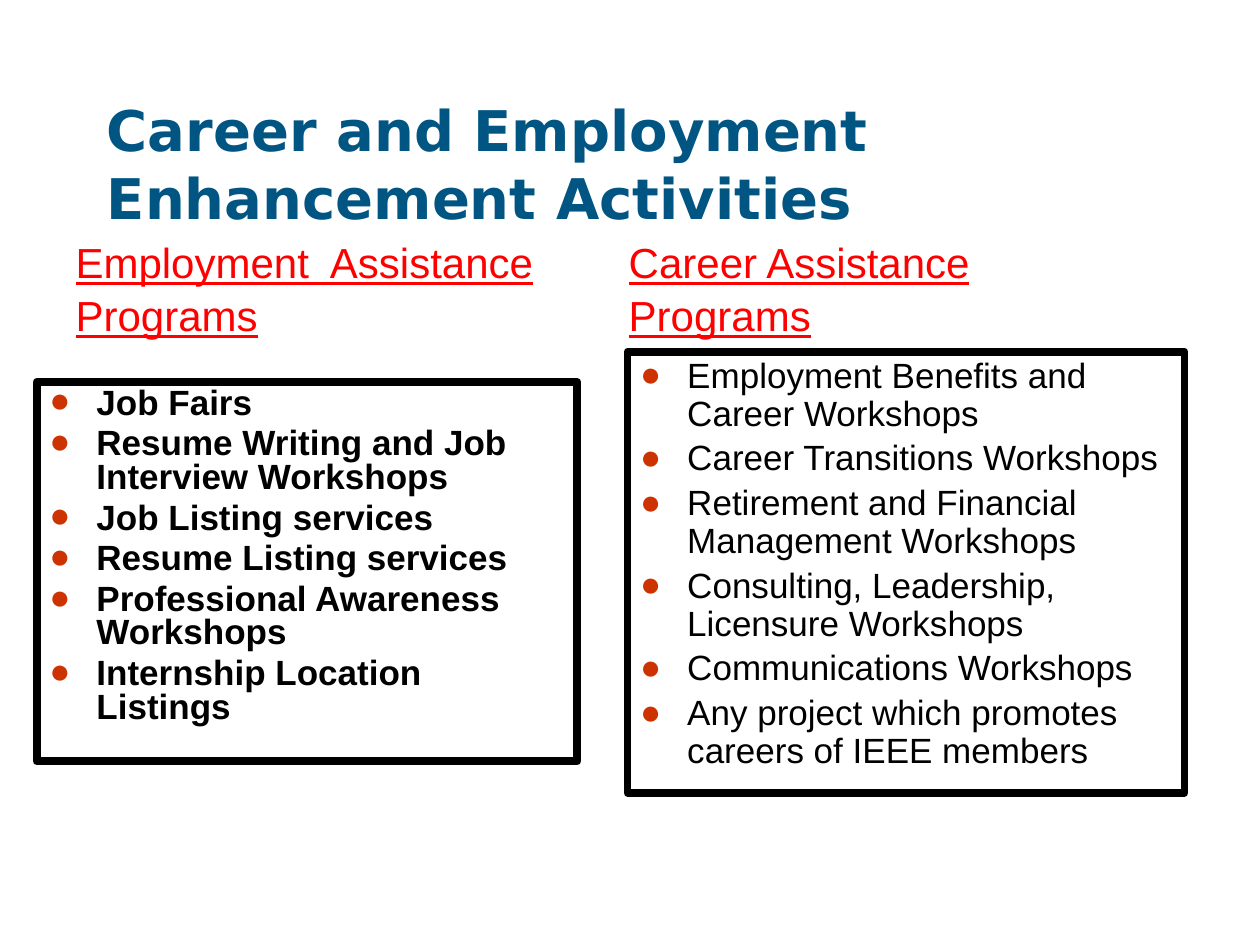
from lxml.etree import SubElement
from pptx import Presentation
from pptx.dml.color import RGBColor
from pptx.enum.text import MSO_ANCHOR as Anchor, MSO_AUTO_SIZE as AutoSize, PP_ALIGN as Align
from pptx.oxml.ns import qn
from pptx.util import Cm, Pt

# Content
TITLE = "Career and Employment Enhancement Activities"
COLUMNS = [
    {
        "heading": "Employment  Assistance Programs",
        "heading_box": (1.27, 4.6, 10.36, 2.31),
        "programs": [
            "Job Fairs",
            "Resume Writing and Job Interview Workshops",
            "Job Listing services",
            "Resume Listing services",
            "Professional Awareness Workshops",
            "Internship Location Listings",
        ],
        "programs_box": (0.74, 7.7, 10.9, 7.65),
        "bold": True,
        "spacing": 0.8,
    },
    {
        "heading": "Career Assistance Programs",
        "heading_box": (12.42, 4.6, 10.36, 2.31),
        "programs": [
            "Employment Benefits and Career Workshops",
            "Career Transitions Workshops",
            "Retirement and Financial Management Workshops",
            "Consulting, Leadership, Licensure Workshops",
            "Communications Workshops",
            "Any project which promotes careers of IEEE members",
        ],
        "programs_box": (12.65, 7.09, 11.23, 8.89),
        "bold": False,
        "spacing": 0.9,
    },
]
COLORS = {"title": "005582", "heading": "FF0000", "text": "000000",
          "frame": "000000", "bullet": "CC3300"}
INDENT = Cm(0.95)


def color(part):
    return RGBColor.from_string(COLORS[part])


def place(holder, box, anchor=Anchor.TOP):
    holder.left, holder.top, holder.width, holder.height = map(Cm, box)
    frame = holder.text_frame
    frame.word_wrap = True
    frame.auto_size = AutoSize.NONE
    frame.vertical_anchor = anchor
    return frame


def add_bullet(paragraph):
    props = paragraph._p.get_or_add_pPr()
    props.set("marL", str(INDENT))
    props.set("indent", str(-INDENT))
    tint = SubElement(props, qn("a:buClr"))
    SubElement(tint, qn("a:srgbClr"), val=COLORS["bullet"])
    SubElement(props, qn("a:buFont"), typeface="Arial")
    SubElement(props, qn("a:buChar"), char="●")


def write(paragraph, text, part, size, face="Arial", bold=False, underline=False,
          spacing=1.0, before=0):
    paragraph.alignment = Align.LEFT
    paragraph.line_spacing = spacing
    paragraph.space_before = Pt(before)
    run = paragraph.add_run()
    run.text = text
    font = run.font
    font.name, font.size, font.bold, font.underline = face, Pt(size), bold, underline
    font.color.rgb = color(part)


deck = Presentation()
deck.slide_width, deck.slide_height = Cm(25.4), Cm(19.05)
slide = deck.slides.add_slide(deck.slide_layouts.get_by_name("Comparison"))
title, *holders = slide.placeholders

# Title
title_frame = place(title, (1.9, 1.7, 21.59, 3.18), Anchor.MIDDLE)
write(title_frame.paragraphs[0], TITLE, "title", 32, "DejaVu Sans", bold=True)

# Two columns: heading above a framed list
for column, heading, programs in zip(COLUMNS, holders[::2], holders[1::2]):
    heading_frame = place(heading, column["heading_box"])
    write(heading_frame.paragraphs[0], column["heading"], "heading", 24,
          underline=True, spacing=1.05)

    programs_frame = place(programs, column["programs_box"])
    programs.line.color.rgb = color("frame")
    programs.line.width = Pt(4.5)
    for i, program in enumerate(column["programs"]):
        paragraph = programs_frame.add_paragraph() if i else programs_frame.paragraphs[0]
        add_bullet(paragraph)
        write(paragraph, program, "text", 20, bold=column["bold"],
              spacing=column["spacing"], before=4 if i else 0)

deck.save("out.pptx")
